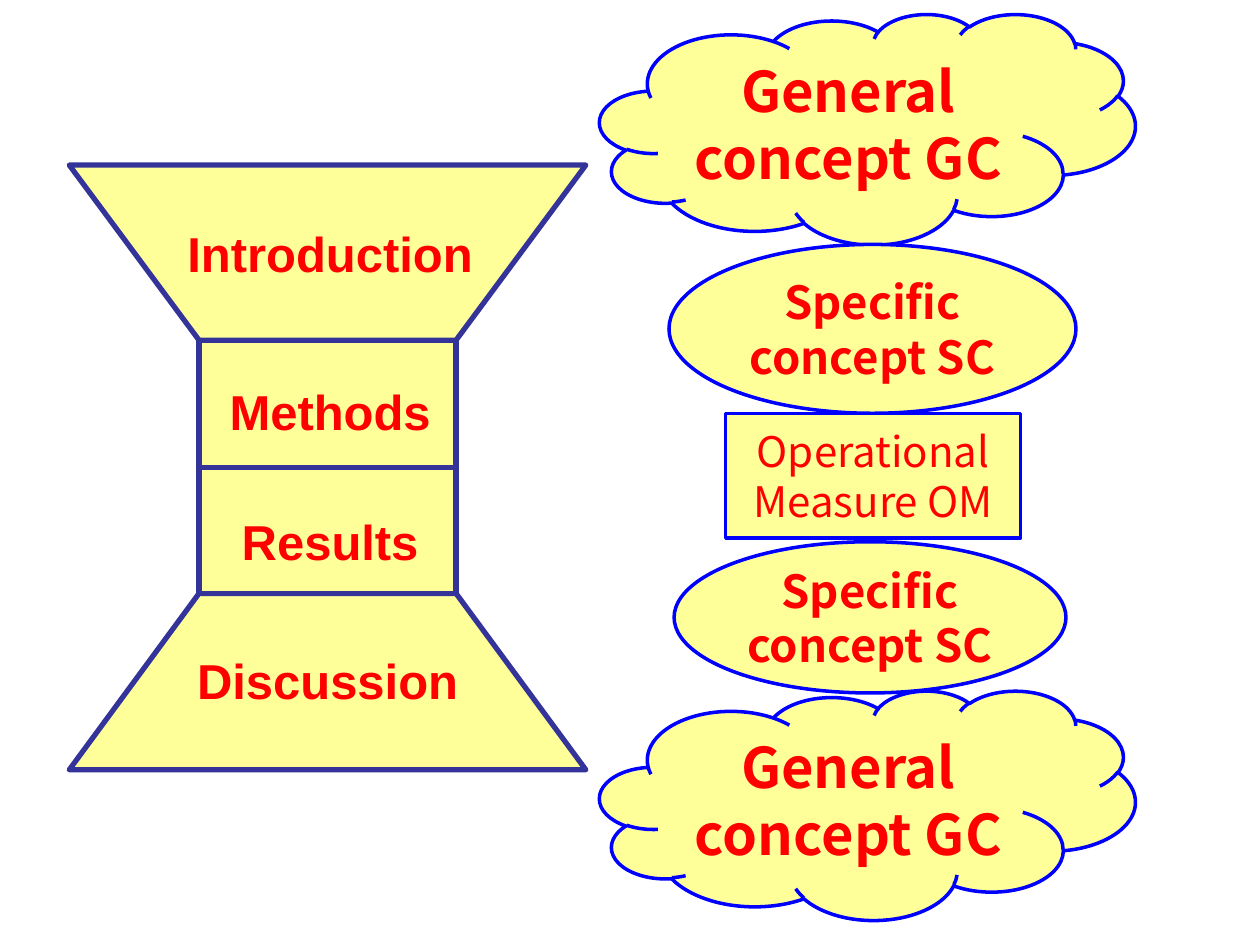
from dataclasses import dataclass

from pptx import Presentation
from pptx.dml.color import RGBColor
from pptx.enum.shapes import MSO_SHAPE
from pptx.enum.text import MSO_ANCHOR, PP_ALIGN
from pptx.util import Inches, Pt

COLUMNS, ROWS = 100, 75
UNIT = Inches(10) // COLUMNS


@dataclass(frozen=True)
class Theme:
    fill: RGBColor = RGBColor(0xFF, 0xFF, 0x99)
    text: RGBColor = RGBColor(0xFF, 0x00, 0x00)
    concept_line: RGBColor = RGBColor(0x00, 0x00, 0xFF)
    section_line: RGBColor = RGBColor(0x33, 0x33, 0x99)
    concept_width: float = 2
    section_width: float = 3
    concept_font: str = "Noto Sans CJK SC"
    section_font: str = "Arial"
    general_size: int = 32
    specific_size: int = 26
    measure_size: int = 24
    section_size: int = 28


THEME = Theme()


def grid(*units):
    return [round(unit * UNIT) for unit in units]


def paint(shape, line_color, line_width):
    shape.shadow.inherit = False
    shape.fill.solid()
    shape.fill.fore_color.rgb = THEME.fill
    shape.line.color.rgb = line_color
    shape.line.width = Pt(line_width)


def write(shape, text, font, size, bold=True):
    frame = shape.text_frame
    frame.word_wrap = True
    frame.vertical_anchor = MSO_ANCHOR.MIDDLE
    frame.text = text
    para = frame.paragraphs[0]
    para.alignment = PP_ALIGN.CENTER
    span = para.runs[0]
    span.font.name = font
    span.font.size = Pt(size)
    span.font.bold = bold
    span.font.color.rgb = THEME.text


def add_concept(page, kind, place, text, size, bold=True):
    shape = page.shapes.add_shape(kind, *grid(*place))
    paint(shape, THEME.concept_line, THEME.concept_width)
    write(shape, text, THEME.concept_font, size, bold)


def add_funnel(group, wide_row, narrow_row, outer, inner):
    corners = [
        grid(outer[0], wide_row),
        grid(inner[0], narrow_row),
        grid(inner[1], narrow_row),
        grid(outer[1], wide_row),
    ]
    builder = group.shapes.build_freeform(*corners[0])
    builder.add_line_segments(corners[1:], close=True)
    paint(builder.convert_to_shape(), THEME.section_line, THEME.section_width)


def add_hourglass(page):
    outer, inner = (5.5, 46.5), (15.8, 36.2)
    top, neck, middle, base, bottom = 13.1, 27, 37.1, 47.1, 61.1
    group = page.shapes.add_group_shape()
    add_funnel(group, bottom, base, outer, inner)
    add_funnel(group, top, neck, outer, inner)
    for start, end in ((neck, middle), (middle, base)):
        place = grid(inner[0], start, inner[1] - inner[0], end - start)
        block = group.shapes.add_shape(MSO_SHAPE.RECTANGLE, *place)
        paint(block, THEME.section_line, THEME.section_width)
    labels = (
        ("Introduction", 26.2, 17.2),
        ("Methods", 26.2, 29.8),
        ("Results", 26.2, 40.1),
        ("Discussion", 26, 51.1),
    )
    width, height = 28, 5.7
    for text, center, row in labels:
        box = group.shapes.add_textbox(*grid(center - width / 2, row, width, height))
        write(box, text, THEME.section_font, THEME.section_size)


def add_concepts(page):
    general, specific = "General concept GC", "Specific concept SC"
    cloud, oval = MSO_SHAPE.CLOUD, MSO_SHAPE.OVAL
    add_concept(page, cloud, (47.6, 1.1, 42.5, 18.3), general, THEME.general_size)
    add_concept(page, oval, (53.1, 19.4, 32.3, 13.4), specific, THEME.specific_size)
    add_concept(page, MSO_SHAPE.RECTANGLE, (57.6, 32.8, 23.4, 9.9),
                "Operational Measure OM", THEME.measure_size, bold=False)
    add_concept(page, oval, (53.5, 43, 31.1, 12), specific, THEME.specific_size)
    add_concept(page, cloud, (47.6, 54.8, 42.5, 18.2), general, THEME.general_size)


def main():
    deck = Presentation()
    deck.slide_width, deck.slide_height = grid(COLUMNS, ROWS)
    page = deck.slides.add_slide(deck.slide_layouts[6])
    add_hourglass(page)
    add_concepts(page)
    deck.save("out.pptx")


if __name__ == "__main__":
    main()
